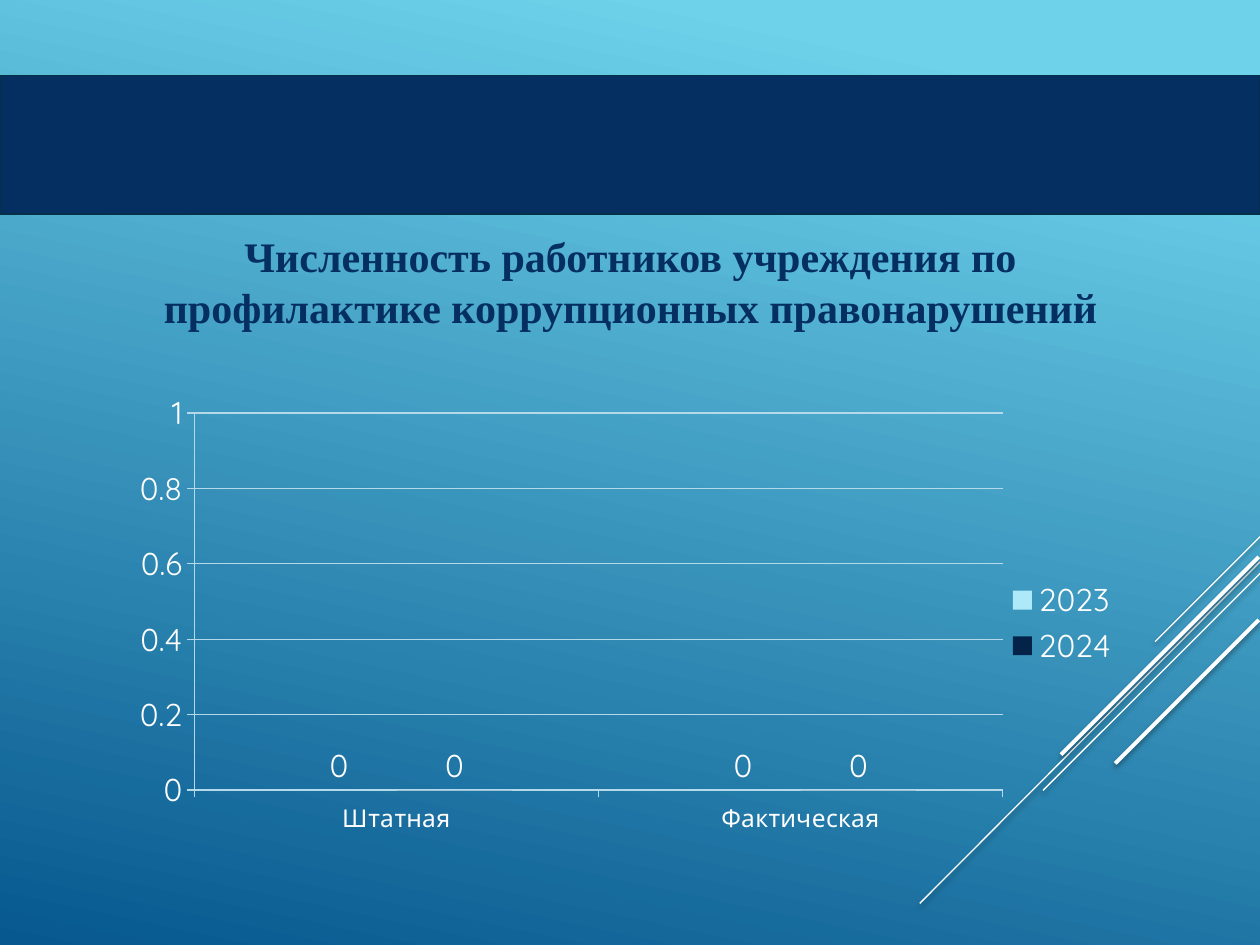
from lxml import etree
from pptx import Presentation
from pptx.chart.data import CategoryChartData
from pptx.dml.color import RGBColor
from pptx.enum.chart import XL_CHART_TYPE, XL_LABEL_POSITION, XL_LEGEND_POSITION, XL_TICK_MARK
from pptx.enum.shapes import MSO_CONNECTOR, MSO_SHAPE
from pptx.enum.text import MSO_ANCHOR, PP_ALIGN
from pptx.oxml import parse_xml
from pptx.util import Pt

COLUMN = XL_CHART_TYPE.COLUMN_CLUSTERED
ABOVE = XL_LABEL_POSITION.OUTSIDE_END
RIGHT = XL_LEGEND_POSITION.RIGHT
OUT, NONE = XL_TICK_MARK.OUTSIDE, XL_TICK_MARK.NONE
STRAIGHT = MSO_CONNECTOR.STRAIGHT
BAND = MSO_SHAPE.FLOWCHART_PROCESS
TOP, CENTER = MSO_ANCHOR.TOP, PP_ALIGN.CENTER

NAVY, WHITE, GRID = "052F61", "FFFFFF", "B4DAEA"
A = "http://schemas.openxmlformats.org/drawingml/2006/main"
C = "http://schemas.openxmlformats.org/drawingml/2006/chart"
SHADOW = (f'<a:effectLst xmlns:a="{A}"><a:outerShdw blurRad="{Pt(3.1)}" dist="{Pt(1.6)}" '
          'dir="5400000" rotWithShape="0"><a:srgbClr val="000000"><a:alpha val="38000"/>'
          '</a:srgbClr></a:outerShdw></a:effectLst>')


def rgb(code):
    return RGBColor.from_string(code)


def style(item, **values):
    for name, value in values.items():
        setattr(item, name, value)


def stroke(line, color, width):
    line.color.rgb = rgb(color)
    line.width = Pt(width)


def place(box):
    return [Pt(v) for v in box]


def paint(slide):
    fill = slide.background.fill
    fill.gradient()
    fill.gradient_angle = 258
    stops = [(0.1, "6ED2EB"), (1, "06588E")]
    for stop, (spot, color) in zip(fill.gradient_stops, stops):
        stop.position = spot
        stop.color.rgb = rgb(color)


def add_rays(slide, box):
    left, top, width, height = box
    # Each diagonal: right inset, top offset, run, rise, line width
    rays = [(0, 0, 60, 60, 0.75), (0, 14.4, 194.4, 195.1, 0.75),
            (0, 21, 124, 124, 0.75), (0.7, 11.5, 113, 113, 2.25),
            (0.7, 47.5, 82, 82, 2.25)]
    for inset, drop, run, rise, weight in rays:
        x, y = left + width - inset, top + drop
        ray = slide.shapes.add_connector(STRAIGHT, *place((x, y, x - run, y + rise)))
        stroke(ray.line, WHITE, weight)
        ray._element.spPr.append(parse_xml(SHADOW))


def add_band(slide, box):
    band = slide.shapes.add_shape(BAND, *place(box))
    band.shadow.inherit = False
    band.fill.solid()
    band.fill.fore_color.rgb = rgb(NAVY)
    stroke(band.line, "043148", 1)


def add_title(slide, box):
    title = slide.shapes.title
    style(title, **dict(zip(("left", "top", "width", "height"), place(box))))
    frame = title.text_frame
    style(frame, word_wrap=True, vertical_anchor=TOP)
    frame.text = "Численность работников учреждения по профилактике коррупционных правонарушений"
    par = frame.paragraphs[0]
    par.alignment = CENTER
    style(par.font, name="Times New Roman", size=Pt(24), bold=True)
    par.font.color.rgb = rgb(NAVY)


def set_plot(chart, x, y, w, h):
    area = chart._chartSpace.chart.plotArea
    for old in area.findall(f"{{{C}}}layout"):
        area.remove(old)
    layout = etree.Element(f"{{{C}}}layout")
    manual = etree.SubElement(layout, f"{{{C}}}manualLayout")
    parts = dict(layoutTarget="inner", xMode="edge", yMode="edge", x=x, y=y, w=w, h=h)
    for name, value in parts.items():
        etree.SubElement(manual, f"{{{C}}}{name}").set("val", str(value))
    area.insert(0, layout)


def add_chart(slide, box):
    data = CategoryChartData()
    data.categories = ["Штатная", "Фактическая"]
    for year in ("2023", "2024"):
        data.add_series(year, (0, 0))
    chart = slide.shapes.add_chart(COLUMN, *place(box), data).chart
    style(chart, has_title=False, has_legend=True)
    style(chart.font, name="Quicksand", size=Pt(18))
    chart.font.color.rgb = rgb(WHITE)
    style(chart.legend, position=RIGHT, include_in_layout=False)
    set_plot(chart, 0.082, 0.058, 0.792, 0.794)

    # Axes
    for axis in (chart.category_axis, chart.value_axis):
        style(axis, major_tick_mark=OUT, minor_tick_mark=NONE)
        stroke(axis.format.line, GRID, 0.75)
    chart.category_axis.tick_labels.font.size = Pt(14)
    values = chart.value_axis
    style(values, minimum_scale=0, maximum_scale=1, major_unit=0.2, has_major_gridlines=True)
    stroke(values.major_gridlines.format.line, GRID, 0.75)

    # Columns and their labels
    plot = chart.plots[0]
    style(plot, gap_width=150, overlap=0, vary_by_categories=False)
    for series, color in zip(plot.series, ("ADE9F8", "042349")):
        series.format.fill.solid()
        series.format.fill.fore_color.rgb = rgb(color)
        style(series.data_labels, show_value=True, position=ABOVE)


def main():
    deck = Presentation()
    style(deck, slide_width=Pt(720), slide_height=Pt(540))
    slide = deck.slides.add_slide(deck.slide_layouts[5])
    paint(slide)
    add_rays(slide, (525.6, 306.7, 194.4, 209.5))
    add_band(slide, (0, 43.2, 720, 79.2))
    add_title(slide, (59, 128.2, 602.6, 64.8))
    add_chart(slide, (63.4, 220.3, 583.2, 271.4))
    deck.save("out.pptx")


if __name__ == "__main__":
    main()
